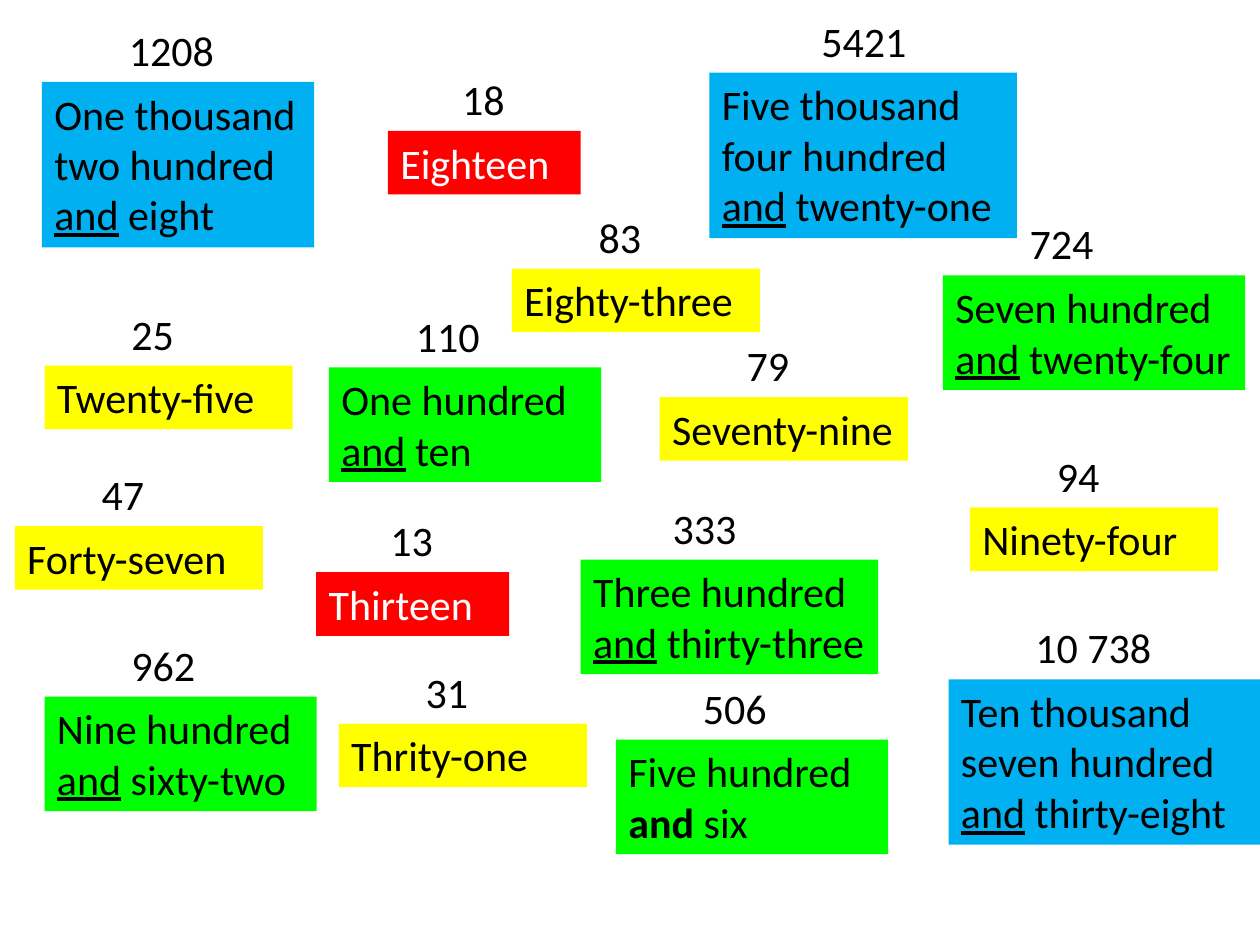
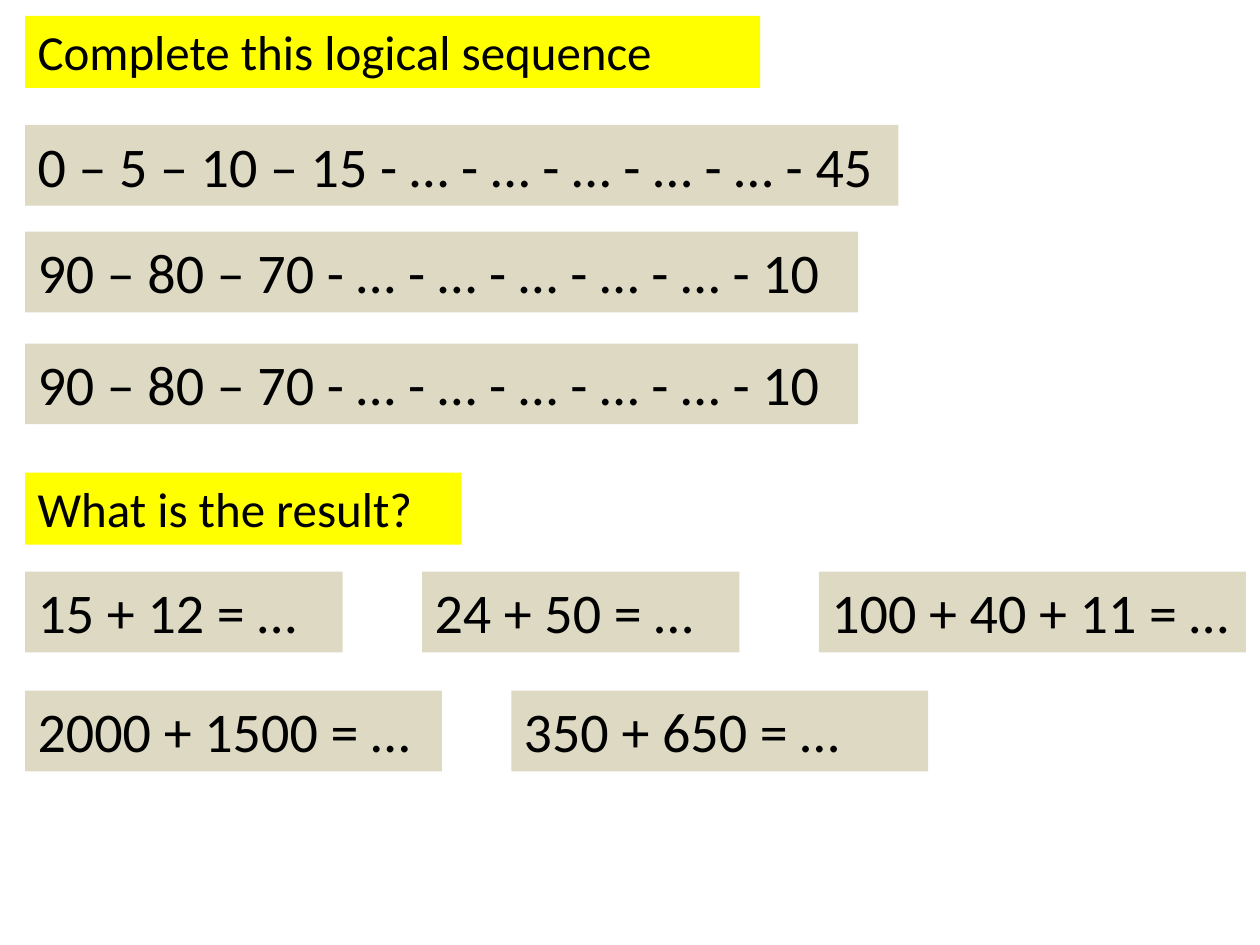
from dataclasses import dataclass

from pptx import Presentation
from pptx.dml.color import RGBColor
from pptx.enum.text import MSO_AUTO_SIZE
from pptx.slide import Slide
from pptx.text.text import _Paragraph
from pptx.util import Pt

FIT_SHAPE = MSO_AUTO_SIZE.SHAPE_TO_FIT_TEXT
BLANK_LAYOUT = 6

BLACK = RGBColor(0x00, 0x00, 0x00)
WHITE = RGBColor(0xFF, 0xFF, 0xFF)
YELLOW = RGBColor(0xFF, 0xFF, 0x00)
GREEN = RGBColor(0x00, 0xFF, 0x00)
BLUE = RGBColor(0x00, 0xB0, 0xF0)
RED = RGBColor(0xFF, 0x00, 0x00)
SAND = RGBColor(0xDD, 0xD9, 0xC3)

FONT = "Calibri"
NUMBER_SIZE, HEADING_SIZE, EXERCISE_SIZE = 24, 28, 32
BOX_HEIGHTS = {NUMBER_SIZE: 36.35, HEADING_SIZE: 41.2, EXERCISE_SIZE: 46.05}
NUMBER_LINE = 29.1
NUMBER_WIDTH = 85
MARGIN = 14.4


@dataclass(frozen=True)
class Family:
    """A range of numbers that share a colour and a number of text lines."""
    fill: RGBColor
    width: float
    lines: int = 1
    color: RGBColor = BLACK
    number_offset: float = 42.5


@dataclass(frozen=True)
class NumberCard:
    number: str
    words: str
    family: Family
    left: float
    top: float
    width: float | None = None
    number_offset: float | None = None
    bold_and: bool = False


@dataclass(frozen=True)
class ExerciseRow:
    top: float
    width: float
    texts: tuple[str, ...]
    gap: float = 0
    last_width: float | None = None


TEENS = Family(RED, 110.2, color=WHITE, number_offset=35.3)
TENS = Family(YELLOW, 141.8)
HUNDREDS = Family(GREEN, 155.5, lines=2)
THOUSANDS = Family(BLUE, 155.5, lines=3)

CARDS = (
    NumberCard("25", "Twenty-five", TENS, 25.5, 209),
    NumberCard("79", "Seventy-nine", TENS, 377, 227),
    NumberCard("47", "Forty-seven", TENS, 8.5, 300.7),
    NumberCard("31", "Thrity-one", TENS, 193.6, 413.5),
    NumberCard("94", "Ninety-four", TENS, 554.3, 290),
    NumberCard("83", "Eighty-three", TENS, 292.5, 153.5),
    NumberCard("110", "One hundred and ten", HUNDREDS, 188, 210),
    NumberCard("506", "Five hundred and six", HUNDREDS, 352, 422.7, bold_and=True),
    NumberCard("724", "Seven hundred and twenty-four", HUNDREDS, 538.8, 157.4, width=172.7),
    NumberCard("962", "Nine hundred and sixty-two", HUNDREDS, 25.5, 398),
    NumberCard("333", "Three hundred and thirty-three", HUNDREDS, 331.8, 319.8,
               width=170, number_offset=45.4),
    NumberCard("1208", "One thousand two hundred and eight", THOUSANDS, 24, 46.8),
    NumberCard("5421", "Five thousand four hundred and twenty-one", THOUSANDS, 405.4, 41.5,
               width=175.7, number_offset=56.9),
    NumberCard("10 738", "Ten thousand seven hundred and thirty-eight", THOUSANDS, 542, 388.2,
               width=178),
    NumberCard("18", "Eighteen", TEENS, 221.7, 74.8),
    NumberCard("13", "Thirteen", TEENS, 180.7, 327),
)

HEADINGS = (
    ExerciseRow(9, 420, ("Complete this logical sequence",)),
    ExerciseRow(270, 249.3, ("What is the result?",)),
)
COUNTDOWN = "90 – 80 – 70 - … - … - … - … - … - 10"
EXERCISES = (
    ExerciseRow(71.4, 499, ("0 – 5 – 10 – 15 - … - … - … - … - … - 45",)),
    ExerciseRow(132.4, 476, (COUNTDOWN,)),
    ExerciseRow(196.3, 476, (COUNTDOWN,)),
    ExerciseRow(326.7, 181.4, ("15 + 12 = …", "24 + 50 = …", "100 + 40 + 11 = …"),
                gap=45.4, last_width=244),
    ExerciseRow(394.7, 238.2, ("2000 + 1500 = …", "350 + 650 = …"), gap=39.6),
)


def add_box(slide: Slide, left: float, top: float, width: float, height: float,
            size: int, fill: RGBColor | None = None, color: RGBColor = BLACK) -> _Paragraph:
    """Add a wrapped text box and return its styled, still empty paragraph."""
    shape = slide.shapes.add_textbox(Pt(left), Pt(top), Pt(width), Pt(height))
    if fill is not None:
        shape.fill.solid()
        shape.fill.fore_color.rgb = fill
    shape.text_frame.word_wrap = True
    shape.text_frame.auto_size = FIT_SHAPE
    paragraph = shape.text_frame.paragraphs[0]
    paragraph.font.name = FONT
    paragraph.font.size = Pt(size)
    paragraph.font.color.rgb = color
    return paragraph


def add_words(paragraph: _Paragraph, words: str, bold_and: bool) -> None:
    """Write a number in words, stressing the linking word."""
    before, link, after = words.partition(" and ")
    if not link:
        paragraph.add_run().text = words
        return
    paragraph.add_run().text = before + " "
    stressed = paragraph.add_run()
    stressed.text = "and"
    if bold_and:
        stressed.font.bold = True
    else:
        stressed.font.underline = True
    paragraph.add_run().text = " " + after


def add_number_card(slide: Slide, card: NumberCard) -> None:
    family = card.family
    line_height = BOX_HEIGHTS[NUMBER_SIZE]
    offset = card.number_offset or family.number_offset
    number = add_box(slide, card.left + offset, card.top - line_height,
                     NUMBER_WIDTH, line_height, NUMBER_SIZE)
    number.add_run().text = card.number
    height = line_height + (family.lines - 1) * NUMBER_LINE
    words = add_box(slide, card.left, card.top, card.width or family.width, height,
                    NUMBER_SIZE, family.fill, family.color)
    add_words(words, card.words, card.bold_and)


def add_exercise_row(slide: Slide, row: ExerciseRow, size: int, fill: RGBColor) -> None:
    for column, text in enumerate(row.texts):
        is_last = column == len(row.texts) - 1
        width = row.last_width if is_last and row.last_width else row.width
        left = MARGIN + column * (row.width + row.gap)
        paragraph = add_box(slide, left, row.top, width, BOX_HEIGHTS[size], size, fill)
        paragraph.add_run().text = text


def main() -> None:
    presentation = Presentation()
    presentation.slide_width, presentation.slide_height = Pt(720), Pt(540)
    blank = presentation.slide_layouts[BLANK_LAYOUT]

    numbers_slide = presentation.slides.add_slide(blank)
    for card in CARDS:
        add_number_card(numbers_slide, card)

    exercises_slide = presentation.slides.add_slide(blank)
    for heading in HEADINGS:
        add_exercise_row(exercises_slide, heading, HEADING_SIZE, YELLOW)
    for exercise in EXERCISES:
        add_exercise_row(exercises_slide, exercise, EXERCISE_SIZE, SAND)

    presentation.save("out.pptx")


if __name__ == "__main__":
    main()
